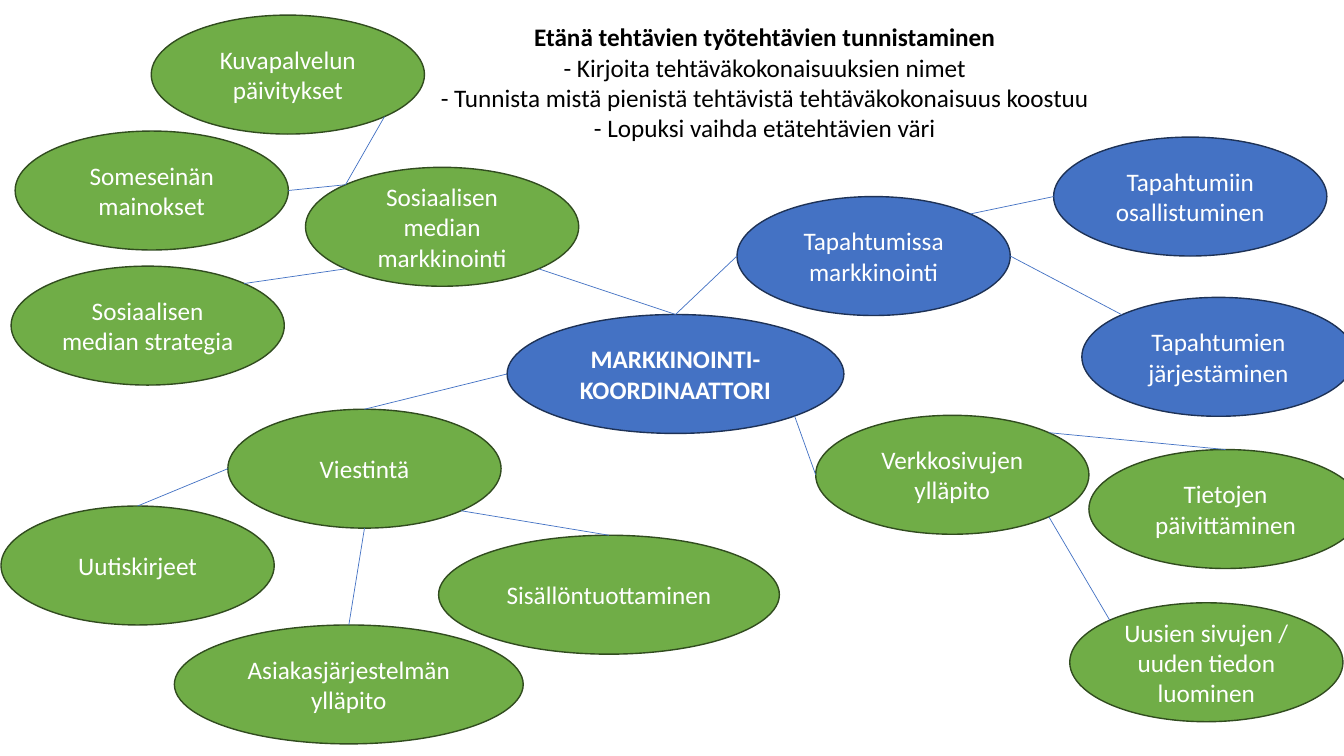
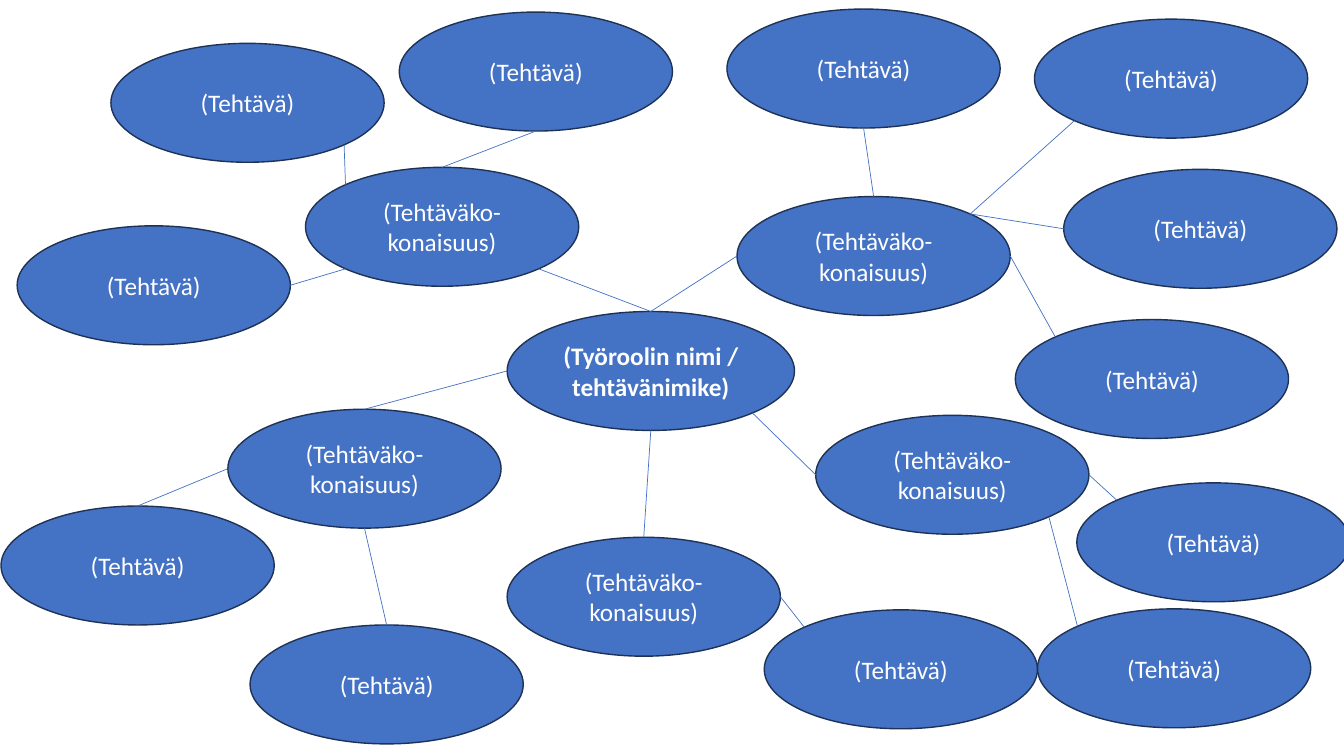
from dataclasses import dataclass, field
from math import cos, pi, sin

from lxml import etree
from pptx import Presentation
from pptx.dml.color import RGBColor
from pptx.enum.shapes import MSO_CONNECTOR, MSO_SHAPE
from pptx.enum.text import MSO_ANCHOR, MSO_AUTO_SIZE, PP_ALIGN
from pptx.oxml.ns import qn
from pptx.util import Inches, Pt

CENTER = PP_ALIGN.CENTER
MIDDLE, TOP_ANCHOR = MSO_ANCHOR.MIDDLE, MSO_ANCHOR.TOP
NO_AUTOFIT = MSO_AUTO_SIZE.NONE
OVAL, STRAIGHT = MSO_SHAPE.OVAL, MSO_CONNECTOR.STRAIGHT

BLACK = RGBColor(0x00, 0x00, 0x00)
WHITE = RGBColor(0xFF, 0xFF, 0xFF)
BLUE = RGBColor(0x44, 0x72, 0xC4)
DARK_BLUE = RGBColor(0x1E, 0x32, 0x56)
GREEN = RGBColor(0x70, 0xAD, 0x47)
DARK_GREEN = RGBColor(0x31, 0x4C, 0x1F)
OUTLINES = {BLUE: DARK_BLUE, GREEN: DARK_GREEN}

FONT = {"name": "Calibri", "size": Pt(18)}
NODE_WIDTH, NODE_HEIGHT = 2.71, 1.18
TITLE_ONLY, BLANK = 5, 6

# Connection sites of an ellipse, counterclockwise from the top
TOP, TOP_LEFT, LEFT, BOTTOM_LEFT, BOTTOM, BOTTOM_RIGHT, RIGHT, TOP_RIGHT = range(8)


@dataclass
class Node:
    """An ellipse; link holds the site on its parent and the site on itself."""
    text: str
    left: float
    top: float
    link: tuple = ()
    width: float = NODE_WIDTH
    fill: RGBColor = BLUE
    children: list = field(default_factory=list)


def green(*values, **options):
    return Node(*values, fill=GREEN, **options)


def task(*values):
    return Node("(Tehtävä)", *values)


def task_group(left, top, link, *tasks):
    return Node("(Tehtäväko-konaisuus)", left, top, link, children=tasks)


HEADING = "Etänä tehtävien työtehtävien tunnistaminen"
INSTRUCTIONS = [
    "- Kirjoita tehtäväkokonaisuuksien nimet",
    "- Tunnista mistä pienistä tehtävistä tehtäväkokonaisuus koostuu",
    "- Lopuksi vaihda etätehtävien väri",
]

EXAMPLE_MAP = Node("MARKKINOINTI-KOORDINAATTORI", 5.03, 3.12, width=3.34, children=[
    green("Sosiaalisen median markkinointi", 3.03, 1.66, (TOP, BOTTOM_RIGHT), children=[
        green("Kuvapalvelun päivitykset", 1.5, 0.15, (TOP_LEFT, BOTTOM_RIGHT)),
        green("Someseinän mainokset", 0.15, 1.3, (TOP_LEFT, RIGHT)),
        green("Sosiaalisen median strategia", 0.11, 2.64, (BOTTOM_LEFT, TOP_RIGHT)),
    ]),
    Node("Tapahtumissa markkinointi", 7.31, 1.95, (TOP, LEFT), children=[
        Node("Tapahtumiin osallistuminen", 10.45, 1.36, (TOP_RIGHT, LEFT)),
        Node("Tapahtumien järjestäminen", 10.73, 2.95, (RIGHT, TOP_LEFT)),
    ]),
    green("Viestintä", 2.26, 4.06, (LEFT, TOP), children=[
        green("Uutiskirjeet", 0.01, 5.02, (LEFT, TOP)),
        green("Asiakasjärjestelmän ylläpito", 1.73, 6.2, (BOTTOM, TOP), width=3.46),
        green("Sisällöntuottaminen", 4.35, 5.31, (BOTTOM_RIGHT, TOP), width=3.38),
    ]),
    green("Verkkosivujen ylläpito", 8.09, 4.12, (BOTTOM_RIGHT, LEFT), children=[
        green("Tietojen päivittäminen", 10.8, 4.46, (TOP_RIGHT, TOP)),
        green("Uusien sivujen / uuden tiedon luominen", 10.61, 5.98,
              (BOTTOM_RIGHT, TOP_LEFT)),
    ]),
])

EMPTY_MAP = Node("(Työroolin nimi / tehtävänimike)", 5.03, 3.09, width=2.85, children=[
    task_group(3.03, 1.66, (TOP, BOTTOM_RIGHT),
               task(1.1, 0.43, (TOP_LEFT, BOTTOM_RIGHT)),
               task(0.17, 2.24, (BOTTOM_LEFT, RIGHT)),
               task(3.96, 0.12, (TOP, BOTTOM))),
    task_group(7.31, 1.95, (TOP, LEFT),
               task(7.21, 0.09, (TOP, BOTTOM)),
               task(10.26, 0.19, (TOP_RIGHT, BOTTOM_LEFT)),
               task(10.55, 1.68, (TOP_RIGHT, LEFT)),
               task(10.07, 3.17, (RIGHT, TOP_LEFT))),
    task_group(2.26, 4.06, (LEFT, TOP),
               task(0.01, 5.02, (LEFT, TOP)),
               task(2.48, 6.2, (BOTTOM, TOP))),
    task_group(5.03, 5.33, (BOTTOM, TOP),
               task(7.58, 6.05, (RIGHT, TOP_LEFT))),
    task_group(8.09, 4.12, (BOTTOM_RIGHT, LEFT),
               task(10.68, 4.79, (RIGHT, TOP_LEFT)),
               task(10.29, 6.04, (BOTTOM_RIGHT, TOP_LEFT))),
])


def write(shape, lines, color, bold=False, anchor=TOP_ANCHOR):
    frame = shape.text_frame
    frame.text = "\n".join(lines)
    frame.word_wrap = True
    frame.auto_size = NO_AUTOFIT
    frame.vertical_anchor = anchor
    for para in frame.paragraphs:
        para.alignment = CENTER
        for name, value in {**FONT, "bold": bold}.items():
            setattr(para.font, name, value)
        para.font.color.rgb = color


def site_point(shape, site):
    angle = pi / 2 + site * pi / 4
    x = shape.left + shape.width / 2 * (1 + cos(angle))
    y = shape.top + shape.height / 2 * (1 - sin(angle))
    return round(x), round(y)


def add_link(slide, ends):
    """Join two ellipses, each given with its site; an ellipse has eight sites."""
    (start_x, start_y), (end_x, end_y) = [site_point(*end) for end in ends]
    link = slide.shapes.add_connector(STRAIGHT, start_x, start_y, end_x, end_y)
    link.line.color.rgb = BLUE
    link.line.width = Pt(0.5)
    etree.SubElement(link.element.spPr, qn("a:effectLst"))
    joints = link.element.find(".//" + qn("p:cNvCxnSpPr"))
    for tag, (shape, site) in zip(("a:stCxn", "a:endCxn"), ends):
        etree.SubElement(joints, qn(tag), id=str(shape.shape_id), idx=str(site))


def add_map(slide, node, parent=None):
    ellipse = slide.shapes.add_shape(
        OVAL, Inches(node.left), Inches(node.top), Inches(node.width), Inches(NODE_HEIGHT))
    ellipse.shadow.inherit = False
    ellipse.fill.solid()
    ellipse.fill.fore_color.rgb = node.fill
    ellipse.line.color.rgb = OUTLINES[node.fill]
    ellipse.line.width = Pt(1)
    write(ellipse, [node.text], WHITE, bold=parent is None, anchor=MIDDLE)
    if parent is not None:
        add_link(slide, list(zip((parent, ellipse), node.link)))
    for child in node.children:
        add_map(slide, child, ellipse)


def add_heading(slide):
    left, width = Inches(4.22), Inches(6.73)
    title = slide.shapes.title
    title.left, title.top, title.width, title.height = left, Inches(0.16), width, Inches(0.31)
    write(title, [HEADING], BLACK, bold=True)
    box = slide.shapes.add_textbox(left, Inches(0.47), width, Inches(1))
    write(box, INSTRUCTIONS, BLACK)


def main():
    deck = Presentation()
    deck.slide_width, deck.slide_height = Inches(13.33), Inches(7.5)
    example = deck.slides.add_slide(deck.slide_layouts[TITLE_ONLY])
    add_heading(example)
    add_map(example, EXAMPLE_MAP)
    add_map(deck.slides.add_slide(deck.slide_layouts[BLANK]), EMPTY_MAP)
    deck.save("out.pptx")


if __name__ == "__main__":
    main()
